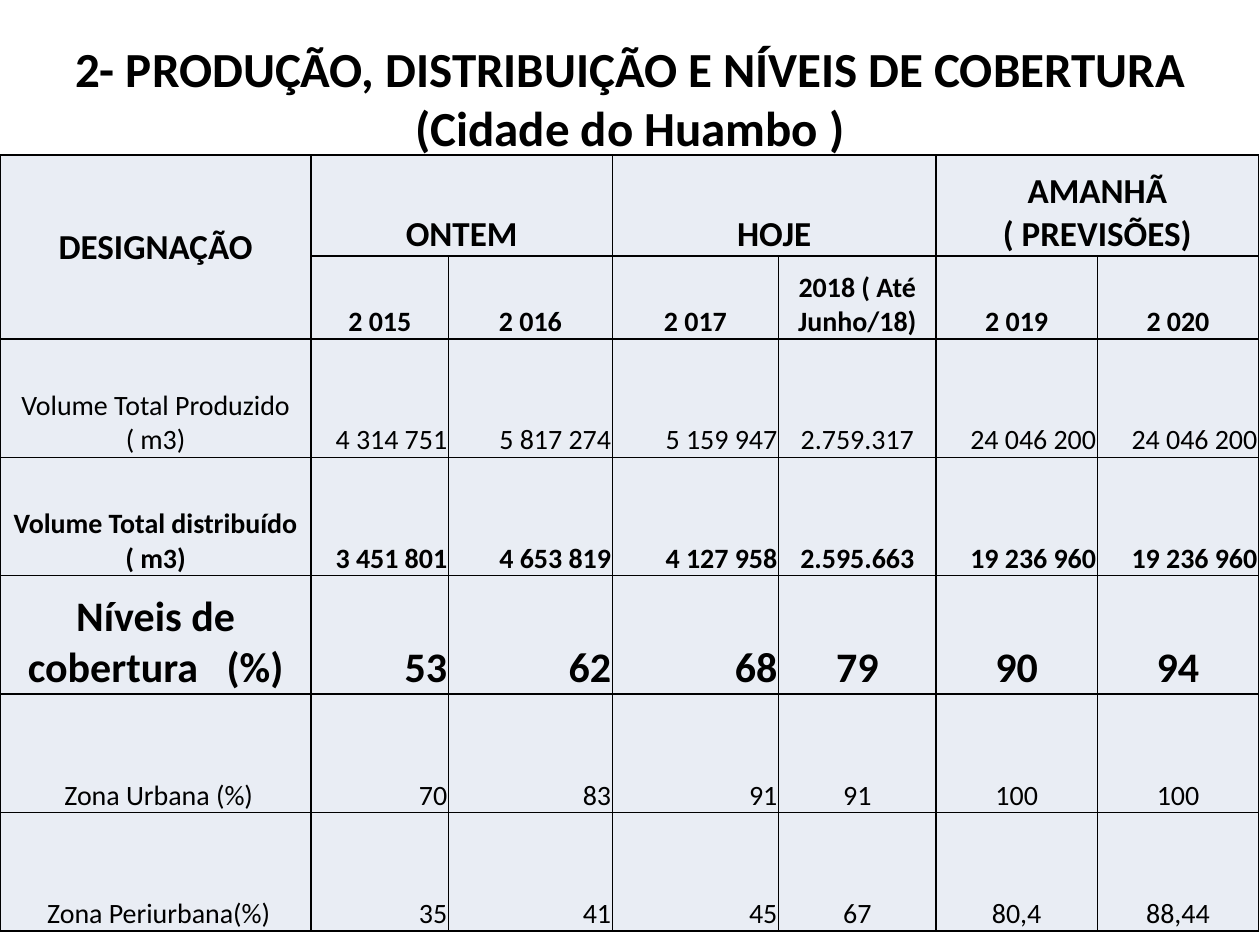
"""Builds the slide on water production, distribution and coverage in Huambo."""
from lxml import etree
from pptx import Presentation
from pptx.dml.color import RGBColor
from pptx.enum.text import MSO_ANCHOR, PP_ALIGN
from pptx.oxml.ns import qn
from pptx.util import Inches, Pt

CENTER, RIGHT = PP_ALIGN.CENTER, PP_ALIGN.RIGHT
MIDDLE, BOTTOM = MSO_ANCHOR.MIDDLE, MSO_ANCHOR.BOTTOM
COLORS = {"text": "000000", "border": "000000", "cell": "E9EDF4"}
FONT = "Calibri"
COLUMN_WIDTHS = [2.47, 1.09, 1.3, 1.32, 1.25, 1.28, 1.28]
ROWS = [
    (0.8, 20, True, ["DESIGNAÇÃO", "ONTEM", "", "HOJE", "", "AMANHÃ ( PREVISÕES)", ""]),
    (0.66, 16, True, ["", "2 015", "2 016", "2 017", "2018 ( Até Junho/18)", "2 019", "2 020"]),
    (0.94, 16, False, ["Volume Total Produzido ( m3)", "4 314 751", "5 817 274", "5 159 947",
                       "2.759.317", "24 046 200", "24 046 200"]),
    (0.94, 16, True, ["Volume Total distribuído ( m3)", "3 451 801", "4 653 819", "4 127 958",
                      "2.595.663", "19 236 960", "19 236 960"]),
    (0.94, 24, True, ["Níveis de cobertura   (%)", "53", "62", "68", "79", "90", "94"]),
    (0.94, 16, False, [" Zona Urbana (%)", "70", "83", "91", "91", "100", "100"]),
    (0.94, 16, False, [" Zona Periurbana(%)", "35", "41", "45", "67", "80,4", "88,44"]),
]
HEADER_ROWS = (0, 1)
VOLUME_ROWS = (2, 3)


def add_span(para, text, size, bold):
    span = para.add_run()
    span.text = text
    span.font.name = FONT
    span.font.size = Pt(size)
    span.font.bold = bold
    span.font.color.rgb = RGBColor.from_string(COLORS["text"])


def add_borders(cell):
    properties = cell._tc.get_or_add_tcPr()
    for side in ("lnL", "lnR", "lnT", "lnB"):
        line = etree.SubElement(properties, qn(f"a:{side}"), w=str(Pt(1)))
        fill = etree.SubElement(line, qn("a:solidFill"))
        etree.SubElement(fill, qn("a:srgbClr"), val=COLORS["border"])


deck = Presentation()
deck.slide_width, deck.slide_height = Inches(10), Inches(7.5)
page = deck.slides.add_slide(deck.slide_layouts[6])

title_box = page.shapes.add_textbox(0, 0, Inches(10), Inches(1.55))
title_frame = title_box.text_frame
title_frame.word_wrap = True
title_frame.vertical_anchor = MIDDLE
title_para = title_frame.paragraphs[0]
title_para.alignment = CENTER
add_span(title_para, "2- PRODUÇÃO, DISTRIBUIÇÃO E NÍVEIS DE COBERTURA", 28, True)
title_para.add_line_break()
add_span(title_para, "(Cidade do Huambo )", 28, True)

table_frame = page.shapes.add_table(
    len(ROWS), len(COLUMN_WIDTHS), 0, Inches(1.23), Inches(10), Inches(6.14))
table = table_frame.table
for column, width in zip(table.columns, COLUMN_WIDTHS):
    column.width = Inches(width)

for row_index, (height, size, bold, texts) in enumerate(ROWS):
    table.rows[row_index].height = Inches(height)
    for column_index, text in enumerate(texts):
        cell = table.cell(row_index, column_index)
        add_borders(cell)
        cell.fill.solid()
        cell.fill.fore_color.rgb = RGBColor.from_string(COLORS["cell"])
        cell.margin_left = cell.margin_right = cell.margin_top = Inches(0.01)
        cell.margin_bottom = 0
        cell.vertical_anchor = BOTTOM
        if text:
            is_right = row_index not in HEADER_ROWS and (
                column_index in (1, 2, 3) or row_index in VOLUME_ROWS and column_index in (5, 6))
            para = cell.text_frame.paragraphs[0]
            para.alignment = RIGHT if is_right else CENTER
            add_span(para, text, size, bold)

table.cell(0, 0).vertical_anchor = MIDDLE
table.cell(0, 0).merge(table.cell(1, 0))
for first_column in (1, 3, 5):
    table.cell(0, first_column).merge(table.cell(0, first_column + 1))

deck.save("out.pptx")
